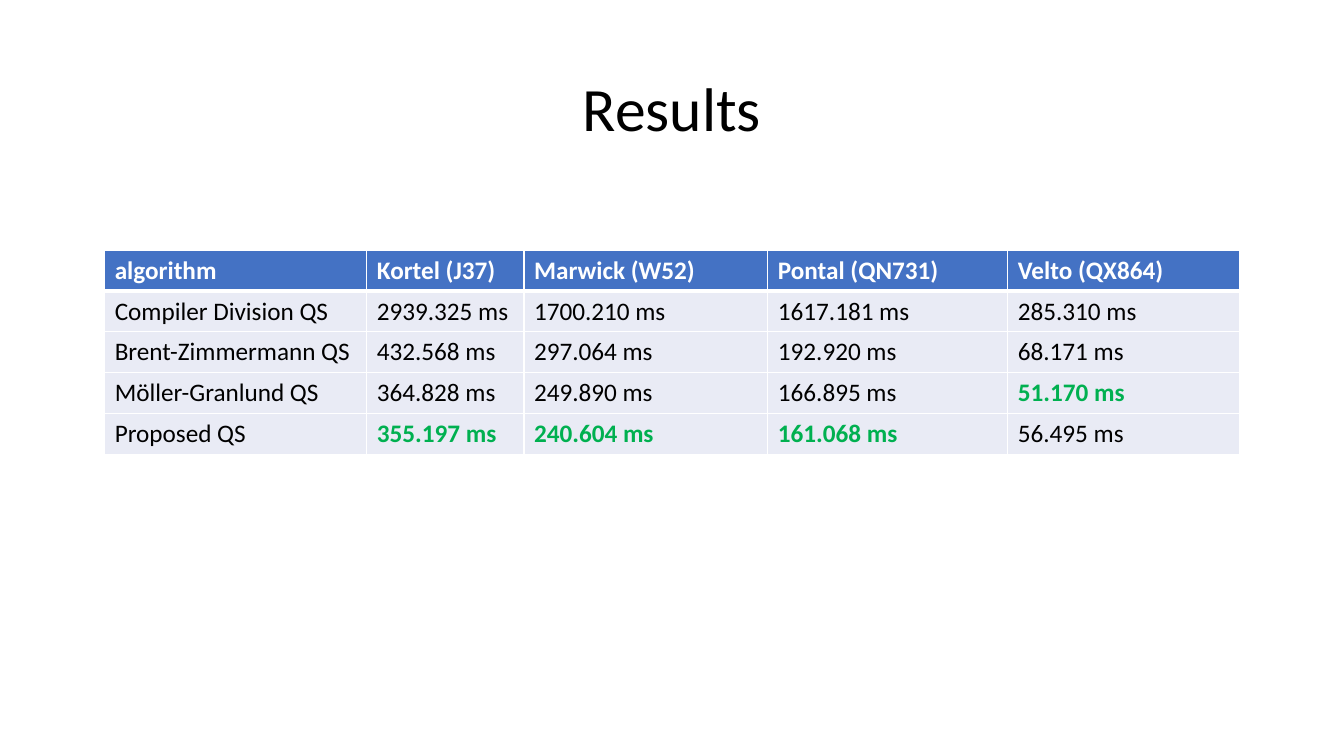
from dataclasses import dataclass

from lxml.etree import SubElement
from pptx import Presentation
from pptx.dml.color import RGBColor
from pptx.enum.text import MSO_ANCHOR, PP_ALIGN
from pptx.oxml.ns import qn
from pptx.slide import Slide
from pptx.table import _Cell
from pptx.util import Pt

FONT = "Calibri"
WHITE, BLACK = "FFFFFF", "000000"
HEADER_BLUE, BODY_TINT, FASTEST_GREEN = "4472C4", "E9EBF5", "00B050"
COLUMN_WIDTHS = (187.2, 112.3, 174.2, 171.4, 165.6)
ROW_HEIGHT = 29.23
THIN, THICK = 1, 3


@dataclass(frozen=True)
class Timing:
    algorithm: str
    milliseconds: tuple[float, ...]


HEADINGS = ("algorithm", "Kortel (J37)", "Marwick (W52)", "Pontal (QN731)", "Velto (QX864)")
TIMINGS = (
    Timing("Compiler Division QS", (2939.325, 1700.210, 1617.181, 285.310)),
    Timing("Brent-Zimmermann QS", (432.568, 297.064, 192.920, 68.171)),
    Timing("Möller-Granlund QS", (364.828, 249.890, 166.895, 51.170)),
    Timing("Proposed QS", (355.197, 240.604, 161.068, 56.495)),
)


def color(hex_code: str) -> RGBColor:
    return RGBColor.from_string(hex_code)


def add_borders(cell: _Cell, top: float, bottom: float) -> None:
    """Give the cell white borders, placed before its fill as the schema asks."""
    properties = cell._tc.get_or_add_tcPr()
    sides = {"a:lnL": THIN, "a:lnR": THIN, "a:lnT": top, "a:lnB": bottom}
    for position, (tag, width) in enumerate(sides.items()):
        line = SubElement(properties, qn(tag), w=str(Pt(width)))
        SubElement(SubElement(line, qn("a:solidFill")), qn("a:srgbClr"), val=WHITE)
        properties.insert(position, line)


def write_cell(cell: _Cell, text: str, fill: str, font_color: str, bold: bool) -> None:
    cell.fill.solid()
    cell.fill.fore_color.rgb = color(fill)
    cell.text_frame.text = text
    font = cell.text_frame.paragraphs[0].runs[0].font
    font.name, font.size, font.bold = FONT, Pt(18), bold
    font.color.rgb = color(font_color)


def add_title(slide: Slide, text: str) -> None:
    title = slide.shapes.title
    title.left, title.top, title.width, title.height = Pt(66), Pt(40.3), Pt(828), Pt(78.5)
    title.text_frame.text = text
    title.text_frame.vertical_anchor = MSO_ANCHOR.MIDDLE
    paragraph = title.text_frame.paragraphs[0]
    paragraph.alignment = PP_ALIGN.CENTER
    paragraph.line_spacing = 0.9
    font = paragraph.runs[0].font
    font.name, font.size = FONT, Pt(44)
    font.color.rgb = color(BLACK)


def add_timings(slide: Slide) -> None:
    """Draw the timing table, with the fastest time of each column in green."""
    row_count = len(TIMINGS) + 1
    table = slide.shapes.add_table(
        row_count, len(HEADINGS), Pt(74.8), Pt(178.6),
        Pt(sum(COLUMN_WIDTHS)), Pt(ROW_HEIGHT * row_count),
    ).table
    for column, width in zip(table.columns, COLUMN_WIDTHS):
        column.width = Pt(width)
    for row in table.rows:
        row.height = Pt(ROW_HEIGHT)

    for column, heading in enumerate(HEADINGS):
        write_cell(table.cell(0, column), heading, HEADER_BLUE, WHITE, True)
    fastest = [min(times) for times in zip(*(timing.milliseconds for timing in TIMINGS))]
    for row, timing in enumerate(TIMINGS, start=1):
        write_cell(table.cell(row, 0), timing.algorithm, BODY_TINT, BLACK, False)
        for column, (time, best) in enumerate(zip(timing.milliseconds, fastest), start=1):
            is_best = time == best
            font_color = FASTEST_GREEN if is_best else BLACK
            write_cell(table.cell(row, column), f"{time:.3f} ms", BODY_TINT, font_color, is_best)

    for row in range(row_count):
        for column in range(len(HEADINGS)):
            add_borders(
                table.cell(row, column),
                top=THICK if row == 1 else THIN,
                bottom=THICK if row == 0 else THIN,
            )


def main() -> None:
    presentation = Presentation()
    presentation.slide_width, presentation.slide_height = Pt(960), Pt(540)
    slide = presentation.slides.add_slide(presentation.slide_layouts.get_by_name("Title Only"))
    add_title(slide, "Results")
    add_timings(slide)
    presentation.save("out.pptx")


if __name__ == "__main__":
    main()
